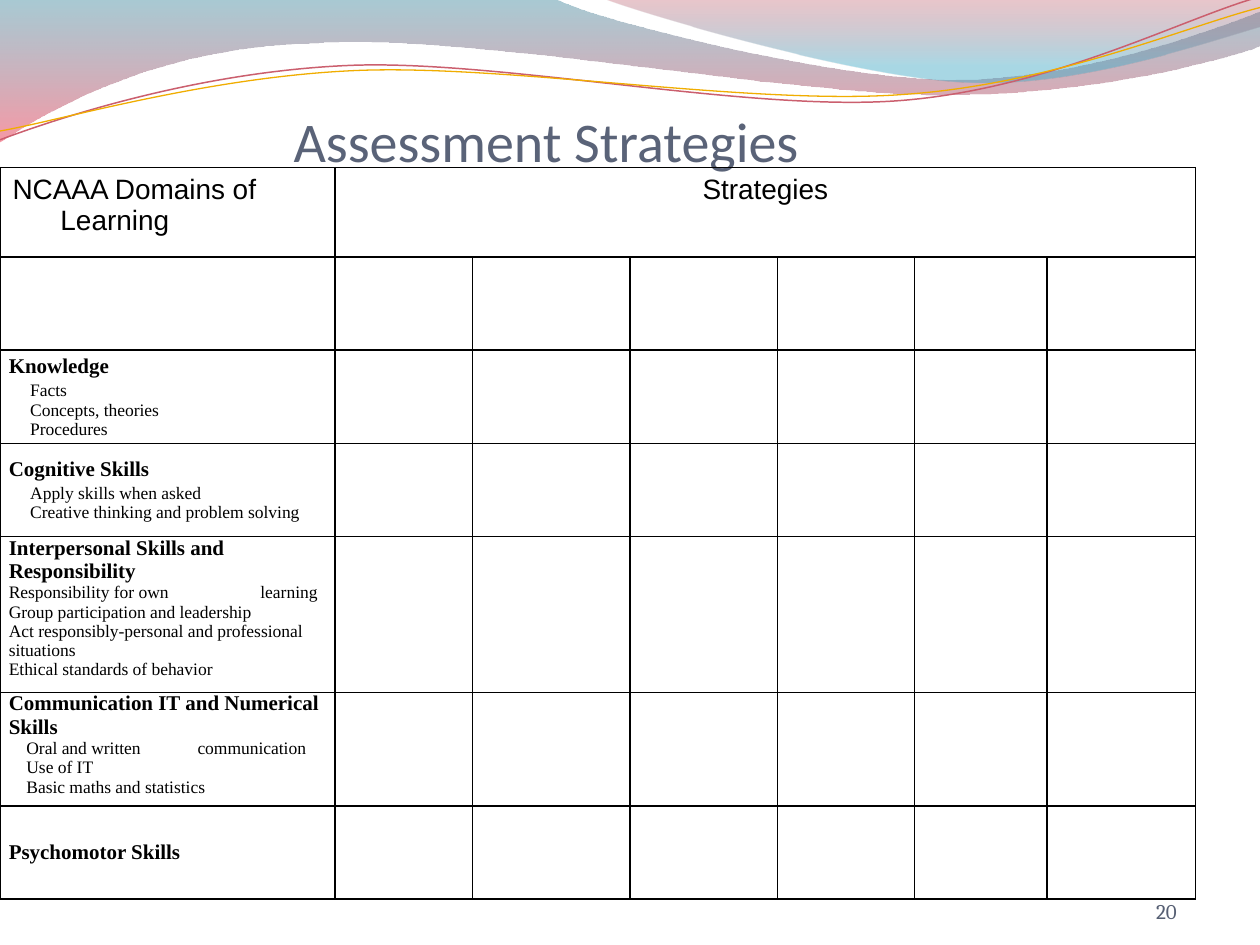
"""Build the assessment strategies slide on a grid of 100 columns by 75 rows."""
import dataclasses
import typing

import lxml.etree
import pptx
import pptx.dml.color
import pptx.enum.text
import pptx.oxml.ns
import pptx.util

UNIT = pptx.util.Inches(0.1)
ALIGN = pptx.enum.text.PP_ALIGN
ANCHOR = pptx.enum.text.MSO_ANCHOR
Point = tuple[float, float]
qn = pptx.oxml.ns.qn


@dataclasses.dataclass
class Wave:
    """A ribbon or line made of Bezier segments and straight corners."""
    start: Point
    segments: list[tuple[Point, ...]]
    stops: tuple = ()
    line: str = ""
    width: float = 0


@dataclasses.dataclass
class Para:
    """A paragraph with its format, indents in columns and gap in points."""
    text: str
    font: dict[str, typing.Any]
    left: float = 0
    hang: float = 0
    gap: float = 0
    align: typing.Any = ALIGN.LEFT
    before: float = 0


@dataclasses.dataclass
class Domain:
    """One learning domain and the outcomes listed under it."""
    name: str
    outcomes: tuple[str, ...] = ()
    left: float = 0
    gap: float = 0
    before: float = 0
    anchor: typing.Any = ANCHOR.MIDDLE


TITLE = {"name": "Calibri", "size": pptx.util.Pt(32), "color": "5A6378"}
NUMBER = {"name": "Cambria", "size": pptx.util.Pt(12), "color": "565F73"}
HEADER = {"name": "Arial", "size": pptx.util.Pt(16), "color": "000000"}
NAME = {"name": "Times New Roman", "size": pptx.util.Pt(12), "bold": True, "color": "000000"}
OUTCOME = {**NAME, "size": pptx.util.Pt(10), "bold": False}

WAVES = [
    Wave((0, 0), [
        ((44, -0.1),),
        ((47.6, 1.7), (66.4, 6.3), (75.8, 6.3)),
        ((85.3, 6.3), (95.8, 2.6), (100, 0.9)),
        ((100.1, 3.6),),
        ((98.3, 4.4), (87, 7.6), (74.6, 7.5)),
        ((62.2, 7.5), (38.2, 2.8), (25.7, 3.4)),
        ((12.9, 3.6), (4.6, 8.3), (-0.1, 11.3)),
    ], stops=((0, "3F8A9F", 45), (1, "EF445B", 55))),
    Wave((47.9, -0.1), [
        ((50.9, 1.1), (68.2, 6.2), (76.9, 6.5)),
        ((85.6, 6.9), (96.1, 3.2), (100, 2.1)),
        ((100, 0),),
    ], stops=((0, "B84253", 30), (0.8, "42ABC7", 45))),
    Wave((0, 11.1), [
        ((4.8, 9.3), (15.8, 5.7), (27.7, 5.2)),
        ((39.5, 4.7), (59.3, 8.9), (71.3, 8)),
        ((83.3, 7.1), (93.8, 1.5), (99.8, -0.2)),
    ], line="CB5F6E", width=0.85),
    Wave((0, 10.4), [
        ((4.7, 9.6), (16.4, 6.1), (28.3, 5.6)),
        ((40.3, 5.1), (59.7, 8.4), (71.7, 7.5)),
        ((83.6, 6.7), (94.1, 2.1), (100, 0.6)),
    ], line="F0AD00", width=0.75),
]

COLUMNS = (26.6, 10.9, 12.5, 11.7, 10.9, 10.5, 11.8)
ROWS = (7.1, 7.4, 7.4, 7.4, 11.4, 8.3, 7.4)
DOMAINS = [
    Domain("Knowledge", ("Facts", "Concepts, theories", "Procedures"), left=1.7, before=2),
    Domain("Cognitive Skills", ("Apply skills when asked", "Creative thinking and problem solving"),
           left=1.7, before=2),
    Domain("Interpersonal Skills and Responsibility",
           ("Responsibility for own|learning", "Group participation and leadership",
            "Act responsibly-personal and professional situations", "Ethical standards of behavior"),
           gap=50, anchor=ANCHOR.TOP),
    Domain("Communication IT and Numerical Skills",
           ("Oral and written|communication", "Use of IT", "Basic maths and statistics"),
           left=1.4, gap=30, anchor=ANCHOR.TOP),
    Domain("Psychomotor Skills"),
]


def grid(n: float) -> int:
    """Turn grid units into a length."""
    return pptx.util.Emu(round(n * UNIT))


def paint(color: typing.Any, value: str) -> None:
    """Set a colour from a hex string."""
    color.rgb = pptx.dml.color.RGBColor.from_string(value)


def bend(sp: typing.Any, segments: list[tuple[Point, ...]]) -> None:
    """Turn the straight steps of a freeform into its cubic curves."""
    for step, seg in zip(list(sp._element.iter(qn("a:lnTo"))), segments):
        if len(seg) == 3:
            curve = lxml.etree.Element(qn("a:cubicBezTo"))
            for x, y in seg:
                lxml.etree.SubElement(curve, qn("a:pt"), x=str(grid(x) - sp.left), y=str(grid(y) - sp.top))
            step.getparent().replace(step, curve)


def draw_wave(s: typing.Any, wave: Wave) -> None:
    """Draw a gradient ribbon or an open curved line."""
    builder = s.shapes.build_freeform(*map(grid, wave.start))
    ends = [tuple(map(grid, seg[-1])) for seg in wave.segments]
    builder.add_line_segments(ends, close=bool(wave.stops))
    sp = builder.convert_to_shape()
    bend(sp, wave.segments)
    sp.shadow.inherit = False
    if wave.line:
        sp.fill.background()
        paint(sp.line.color, wave.line)
        sp.line.width = pptx.util.Pt(wave.width)
        return
    sp.line.fill.background()
    sp.fill.gradient()
    sp.fill.gradient_angle = 270
    for stop, (position, value, _) in zip(sp.fill.gradient_stops, wave.stops):
        stop.position = position
        paint(stop.color, value)
    for clr, (_, _, alpha) in zip(sp._element.spPr.iter(qn("a:srgbClr")), wave.stops):
        lxml.etree.SubElement(clr, qn("a:alpha"), val=str(alpha * 1000))


def add_run(p: typing.Any, text: str, font: dict[str, typing.Any]) -> typing.Any:
    """Add a formatted run to a paragraph."""
    r = p.add_run()
    r.text = text
    for key, value in font.items():
        if key == "color":
            paint(r.font.color, value)
        else:
            setattr(r.font, key, value)
    return r


def write(tf: typing.Any, paras: list[Para]) -> None:
    """Fill a text frame, widening one space where a bar splits the text."""
    tf.word_wrap = True
    for i, para in enumerate(paras):
        p = tf.add_paragraph() if i else tf.paragraphs[0]
        p.alignment = para.align
        p.space_before = pptx.util.Pt(para.before)
        pPr = p._p.get_or_add_pPr()
        pPr.set("marL", str(grid(para.left)))
        pPr.set("indent", str(grid(-para.hang)))
        head, bar, tail = para.text.partition("|")
        add_run(p, head, para.font)
        if bar:
            space = add_run(p, " ", para.font)
            space._r.get_or_add_rPr().set("spc", str(para.gap * 100))
            add_run(p, tail, para.font)


def draw_text(s: typing.Any, box: tuple[float, ...], para: Para, top: float = 0) -> None:
    """Add a bottom-anchored text box."""
    tf = s.shapes.add_textbox(*map(grid, box)).text_frame
    margins = {"margin_left": 0, "margin_right": 0, "margin_top": grid(top), "margin_bottom": 0}
    for key, value in {**margins, "vertical_anchor": ANCHOR.BOTTOM}.items():
        setattr(tf, key, value)
    write(tf, [para])


def style_cell(cell: typing.Any) -> None:
    """Give a cell no fill and thin black borders."""
    cell.fill.background()
    tcPr = cell._tc.get_or_add_tcPr()
    for i, side in enumerate("LRTB"):
        ln = lxml.etree.Element(qn(f"a:ln{side}"), w=str(pptx.util.Pt(1)))
        fill = lxml.etree.SubElement(ln, qn("a:solidFill"))
        lxml.etree.SubElement(fill, qn("a:srgbClr"), val="000000")
        tcPr.insert(i, ln)


def draw_table(s: typing.Any) -> None:
    """Add the table of domains against strategies."""
    size = (grid(sum(COLUMNS)), grid(sum(ROWS)))
    table = s.shapes.add_table(len(ROWS), len(COLUMNS), 0, grid(13.3), *size).table
    table.first_row = table.horz_banding = False
    for column, width in zip(table.columns, COLUMNS):
        column.width = grid(width)
    for row, height in zip(table.rows, ROWS):
        row.height = grid(height)
    for cell in table.iter_cells():
        style_cell(cell)
    table.cell(0, 1).merge(table.cell(0, len(COLUMNS) - 1))
    write(table.cell(0, 0).text_frame, [Para("NCAAA Domains of Learning", HEADER, 3.8, 3.8)])
    write(table.cell(0, 1).text_frame, [Para("Strategies", HEADER, 3.8, 3.8, align=ALIGN.CENTER)])
    for i, d in enumerate(DOMAINS, 2):
        cell = table.cell(i, 0)
        layout = {"margin_left": grid(0.7), "margin_right": grid(0.7), "margin_top": 0,
                  "margin_bottom": 0, "vertical_anchor": d.anchor}
        for key, value in layout.items():
            setattr(cell, key, value)
        write(cell.text_frame, [Para(d.name, NAME)] + [
            Para(text, OUTCOME, d.left, gap=d.gap, before=0 if j else d.before)
            for j, text in enumerate(d.outcomes)])


def main() -> None:
    """Build and save the slide."""
    prs = pptx.Presentation()
    prs.slide_width, prs.slide_height = grid(100), grid(75)
    s = prs.slides.add_slide(prs.slide_layouts[6])
    for wave in WAVES:
        draw_wave(s, wave)
    draw_text(s, (23.3, -0.8, 70, 14.6), Para("Assessment Strategies", TITLE), top=0.5)
    draw_table(s)
    draw_text(s, (79.2, 68.3, 14.2, 5), Para("20", NUMBER, align=ALIGN.RIGHT))
    prs.save("out.pptx")


if __name__ == "__main__":
    main()
